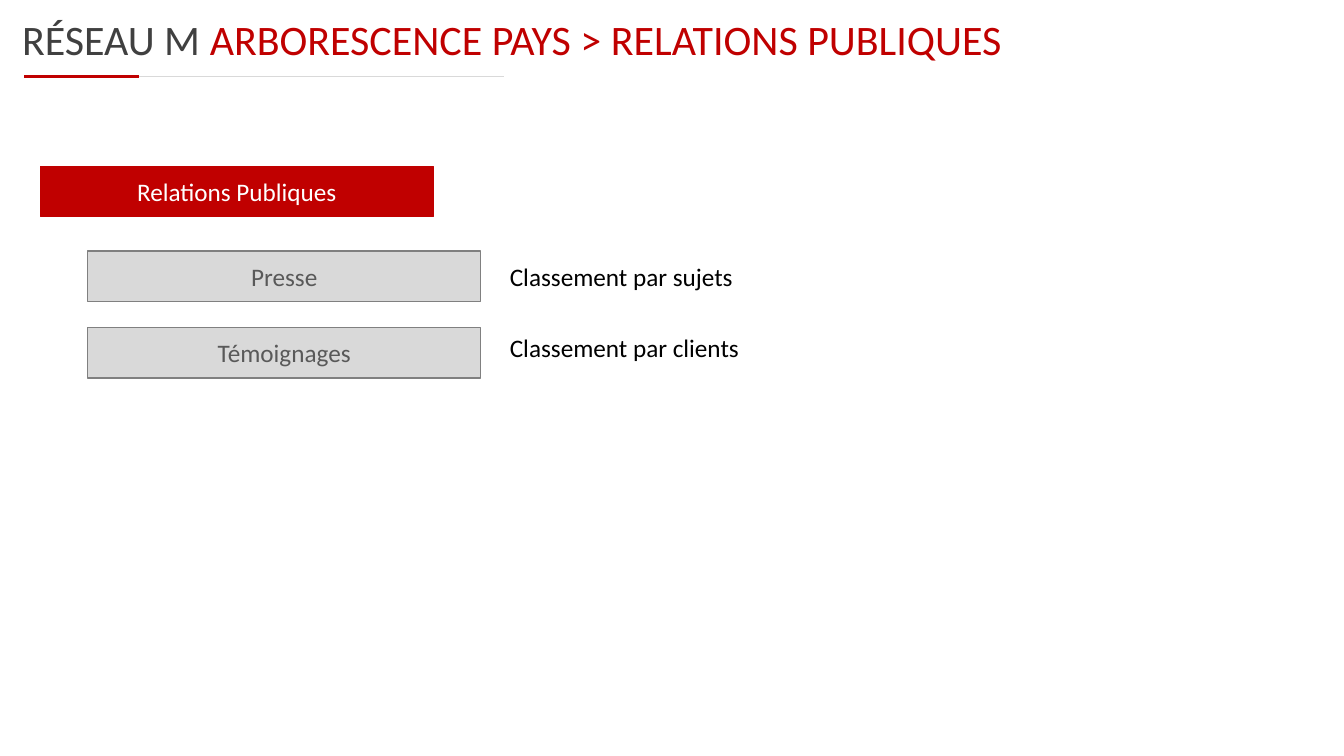
from pptx import Presentation
from pptx.dml.color import RGBColor
from pptx.enum.shapes import MSO_CONNECTOR, MSO_SHAPE
from pptx.enum.text import MSO_ANCHOR, MSO_AUTO_SIZE, PP_ALIGN
from pptx.oxml.ns import qn
from pptx.util import Pt
from lxml import etree

RECTANGLE = MSO_SHAPE.RECTANGLE
STRAIGHT = MSO_CONNECTOR.STRAIGHT
TOP, MIDDLE = MSO_ANCHOR.TOP, MSO_ANCHOR.MIDDLE
LEFT, CENTER = PP_ALIGN.LEFT, PP_ALIGN.CENTER
FIT_SHAPE, NO_FIT = MSO_AUTO_SIZE.SHAPE_TO_FIT_TEXT, MSO_AUTO_SIZE.NONE

FONT = "Calibri"
COLORS = {
    "red": "C00000",
    "white": "FFFFFF",
    "black": "000000",
    "title": "404040",
    "label": "595959",
    "border": "808080",
    "light": "D9D9D9",
}


def color(name):
    """Return the named colour."""
    return RGBColor.from_string(COLORS[name])


def write(frame, *runs, size=18, align=LEFT, anchor=TOP, fit=NO_FIT):
    """Write (text, colour) runs as one formatted paragraph."""
    frame.word_wrap = True
    frame.auto_size = fit
    frame.vertical_anchor = anchor
    paragraph = frame.paragraphs[0]
    paragraph.alignment = align
    for text, ink in runs:
        run = paragraph.add_run()
        run.text = text
        run.font.name = FONT
        run.font.size = Pt(size)
        run.font.color.rgb = color(ink)


def add_rule(slide, start, end, y, ink, width):
    """Draw a horizontal rule without shadow."""
    rule = slide.shapes.add_connector(STRAIGHT, Pt(start), Pt(y), Pt(end), Pt(y))
    rule.line.color.rgb = color(ink)
    rule.line.width = Pt(width)
    etree.SubElement(rule._element.spPr, qn("a:effectLst"))


def add_node(slide, left, top, width, height, name, fill, border, ink):
    """Draw one tree node with its centred name."""
    node = slide.shapes.add_shape(RECTANGLE, Pt(left), Pt(top), Pt(width), Pt(height))
    node.shadow.inherit = False
    node.fill.solid()
    node.fill.fore_color.rgb = color(fill)
    node.line.color.rgb = color(border)
    node.line.width = Pt(1)
    write(node.text_frame, (name, ink), align=CENTER, anchor=MIDDLE)


def add_text(slide, left, top, width, height, *runs, **style):
    """Place a text box holding the given runs."""
    box = slide.shapes.add_textbox(Pt(left), Pt(top), Pt(width), Pt(height))
    write(box.text_frame, *runs, **style)


def add_header(slide, left, top, width, height):
    """Place the title and the two-tone rule under it."""
    rule_y = top + 48.25
    rule_start, rule_split, rule_end = left + 8.6, left + 90.7, left + 351.4
    add_rule(slide, rule_split, rule_end, rule_y, "light", 0.25)
    add_rule(slide, rule_start, rule_split, rule_y, "red", 2.5)
    add_text(slide, left, top, width, height, ("RÉSEAU M ", "title"),
             ("ARBORESCENCE PAYS > RELATIONS PUBLIQUES", "red"), size=30)


def add_tree(slide, left, top, width, height):
    """Place the root section, its child pages and their sorting notes."""
    node_width, node_height, indent = 280.8, 36, 33.85
    first_child, child_step = top + 60.5, 54.75
    note_left, note_width = left + 328.3, width - 328.3
    add_node(slide, left, top, node_width, node_height,
             "Relations Publiques", "red", "red", "white")
    children = [
        ("Presse", "Classement par sujets", 3.6),
        ("Témoignages", "Classement par clients", 0),
    ]
    for index, (page, note, note_offset) in enumerate(children):
        child_top = first_child + index * child_step
        add_node(slide, left + indent, child_top, node_width, node_height,
                 page, "light", "border", "label")
        add_text(slide, note_left, child_top + note_offset, note_width, 29,
                 (note, "black"), fit=FIT_SHAPE)


def main():
    """Build and save the slide."""
    deck = Presentation()
    deck.slide_width, deck.slide_height = Pt(960), Pt(540)
    slide = deck.slides.add_slide(deck.slide_layouts[6])
    add_header(slide, 8.65, 6.5, 915.85, 60.5)
    add_tree(slide, 28.8, 118.8, 812.85, 151.25)
    deck.save("out.pptx")


if __name__ == "__main__":
    main()
